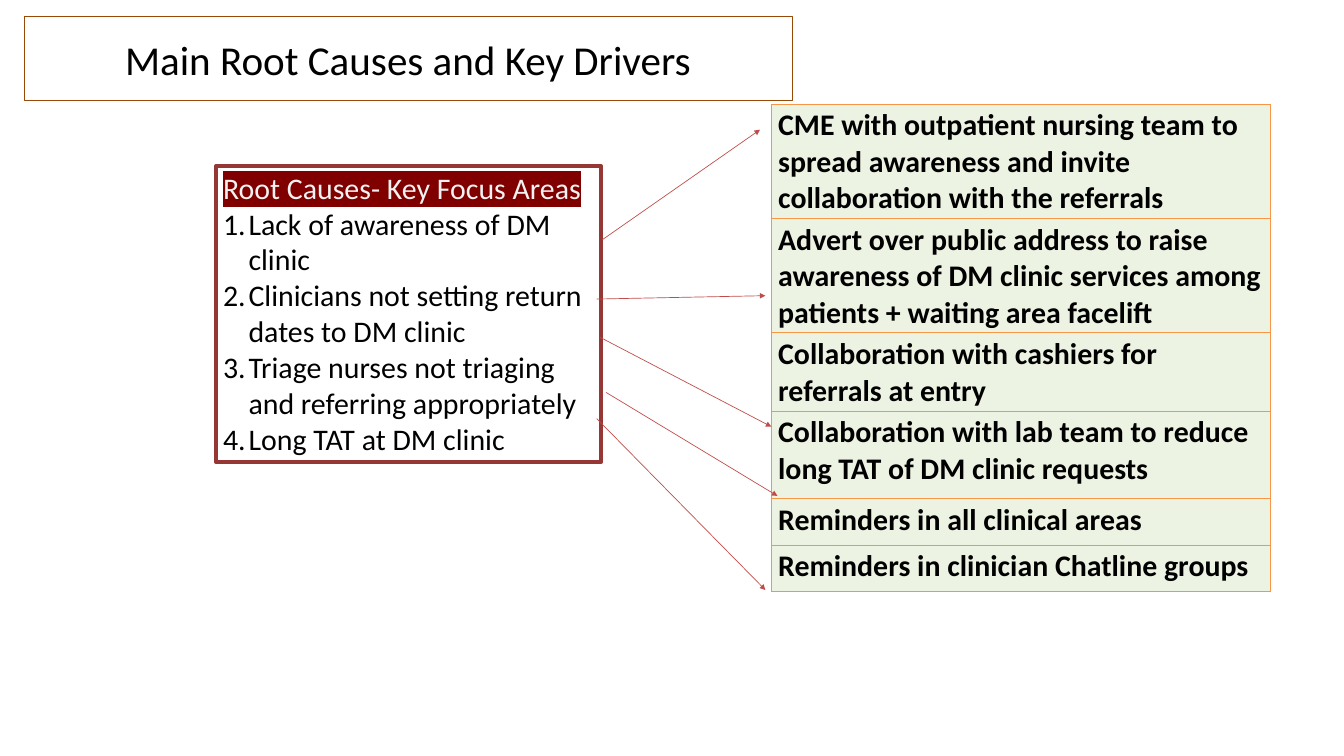
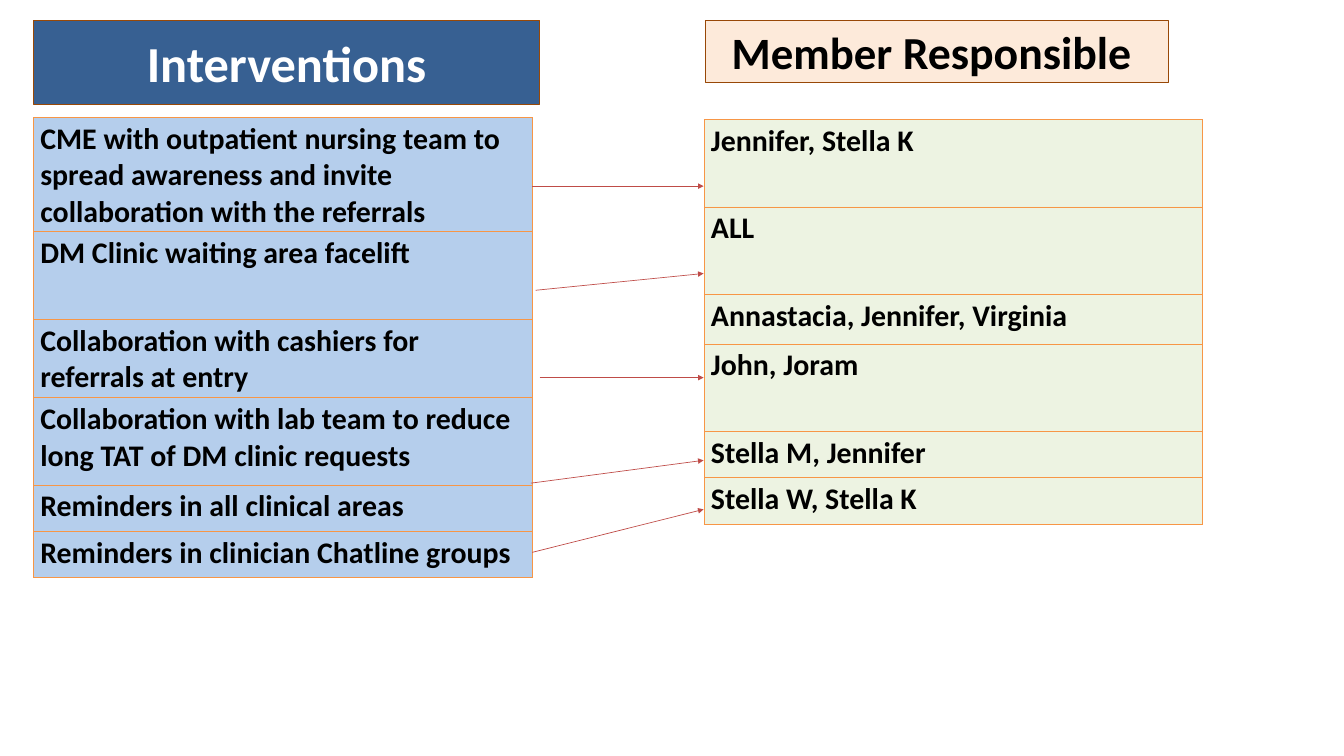
from lxml.etree import SubElement
from pptx import Presentation
from pptx.dml.color import RGBColor
from pptx.enum.shapes import MSO_CONNECTOR, MSO_SHAPE
from pptx.enum.text import MSO_ANCHOR, MSO_AUTO_SIZE, PP_ALIGN
from pptx.oxml.ns import qn
from pptx.util import Inches, Pt

BLACK = RGBColor(0x00, 0x00, 0x00)
WHITE = RGBColor(0xFF, 0xFF, 0xFF)
OFF_WHITE = RGBColor(0xF2, 0xF2, 0xF2)
BROWN = RGBColor(0x98, 0x48, 0x07)
CRIMSON = RGBColor(0x95, 0x37, 0x35)
MAROON = RGBColor(0x80, 0x00, 0x00)
ARROW_RED = RGBColor(0xBF, 0x4C, 0x48)
ORANGE = RGBColor(0xF7, 0x96, 0x46)
PEACH = RGBColor(0xFD, 0xEA, 0xDA)
NAVY = RGBColor(0x37, 0x60, 0x92)
BLUE = RGBColor(0x55, 0x8E, 0xD5)
GREEN = RGBColor(0xD7, 0xE4, 0xBD)

BODY_SIZE = 32
CELL_OPACITY = 43
COLUMN_WIDTH = 7.42
ROW_HEIGHTS = [1.3, 1.3, 0.74, 1.3, 0.69, 0.69]

ROOT_CAUSES = [
    "Lack of awareness of DM clinic",
    "Clinicians not setting return dates to DM clinic",
    "Triage nurses not triaging and referring appropriately",
    "Long TAT at DM clinic",
]
OUTREACH = "CME with outpatient nursing team to spread awareness and invite collaboration with the referrals"
ADVERT = ("Advert over public address to raise awareness of DM clinic services "
          "among patients + waiting area facelift")
FACELIFT = "DM Clinic waiting area facelift"
SHARED_INTERVENTIONS = [
    "Collaboration with cashiers for referrals at entry",
    "Collaboration with lab team to reduce long TAT of DM clinic requests",
    "Reminders in all clinical areas",
    "Reminders in clinician Chatline groups",
]
MEMBERS = [
    "Jennifer, Stella K",
    "ALL",
    "Annastacia, Jennifer, Virginia",
    "John, Joram",
    "Stella M, Jennifer",
    "Stella W, Stella K",
]
CAUSE_ARROWS = [
    ((8.96, 3.57), (11.31, 1.93)),
    ((8.88, 4.45), (11.39, 4.4)),
    ((8.93, 5.02), (11.48, 6.35)),
    ((9.02, 5.84), (11.57, 7.38)),
    ((8.88, 6.23), (11.39, 8.78)),
]
MEMBER_ARROWS = [
    ((7.92, 2.77), (10.47, 2.77)),
    ((7.97, 4.32), (10.47, 4.07)),
    ((8.03, 5.62), (10.47, 5.62)),
    ((7.9, 7.19), (10.47, 6.85)),
    ((7.92, 8.22), (10.47, 7.58)),
]


class Deck:
    def __init__(self):
        self.presentation = Presentation()
        self.presentation.slide_width = Inches(20)
        self.presentation.slide_height = Inches(11.25)
        self.slide = None

    def styled_run(self, paragraph, text, size=BODY_SIZE, color=BLACK, bold=False):
        run = paragraph.add_run()
        run.text = text
        style = {"name": "Calibri", "size": Pt(size), "bold": bold}
        for attribute, value in style.items():
            setattr(run.font, attribute, value)
        run.font.color.rgb = color
        return run

    def outline(self, box, fill, color, width):
        if fill is None:
            box.fill.background()
        else:
            box.fill.solid()
            box.fill.fore_color.rgb = fill
        box.line.color.rgb = color
        box.line.width = Pt(width)

    def titled_slide(self, text, place, fill=None, **style):
        layout = self.presentation.slide_layouts[5]
        self.slide = self.presentation.slides.add_slide(layout)
        title = self.slide.shapes.title
        for side, length in zip(("left", "top", "width", "height"), place):
            setattr(title, side, Inches(length))
        self.outline(title, fill, BROWN, 0.75)
        title.text_frame.vertical_anchor = MSO_ANCHOR.MIDDLE
        heading = title.text_frame.paragraphs[0]
        heading.alignment = PP_ALIGN.CENTER
        self.styled_run(heading, text, **style)

    def box(self, place, fill, color, width, align):
        """Add a top-anchored rectangle and return its text frame."""
        panel = self.slide.shapes.add_shape(MSO_SHAPE.RECTANGLE, *map(Inches, place))
        panel.shadow.inherit = False
        self.outline(panel, fill, color, width)
        frame = panel.text_frame
        frame_format = {
            "word_wrap": True,
            "vertical_anchor": MSO_ANCHOR.TOP,
            "auto_size": MSO_AUTO_SIZE.SHAPE_TO_FIT_TEXT,
        }
        for attribute, value in frame_format.items():
            setattr(frame, attribute, value)
        frame.paragraphs[0].alignment = align
        return frame

    def highlight(self, run, color):
        text_fill = run.font._element.find(qn("a:solidFill"))
        marker = SubElement(run.font._element, qn("a:highlight"))
        SubElement(marker, qn("a:srgbClr"), val=str(color))
        text_fill.addnext(marker)

    def numbered(self, frame, items):
        for item in items:
            paragraph = frame.add_paragraph()
            paragraph.alignment = PP_ALIGN.LEFT
            properties = paragraph._p.get_or_add_pPr()
            properties.set("marL", str(Inches(0.38)))
            properties.set("indent", str(Inches(-0.38)))
            SubElement(properties, qn("a:buAutoNum"), type="arabicPeriod")
            self.styled_run(paragraph, item)

    def column(self, left, top, entries, fill):
        """Add a one-column table with a translucent fill."""
        table = self.slide.shapes.add_table(
            len(entries), 1, Inches(left), Inches(top),
            Inches(COLUMN_WIDTH), Inches(sum(ROW_HEIGHTS))).table
        table.first_row = table.horz_banding = False
        for row, height, entry in zip(table.rows, ROW_HEIGHTS, entries):
            row.height = Inches(height)
            cell = row.cells[0]
            properties = cell._tc.get_or_add_tcPr()
            for side in ("lnL", "lnR", "lnT", "lnB"):
                border = SubElement(properties, qn(f"a:{side}"), w=str(Pt(1)))
                border_fill = SubElement(border, qn("a:solidFill"))
                SubElement(border_fill, qn("a:srgbClr"), val=str(ORANGE))
            cell.fill.solid()
            cell.fill.fore_color.rgb = fill
            shade = properties.find(qn("a:solidFill")).find(qn("a:srgbClr"))
            SubElement(shade, qn("a:alpha"), val=str(CELL_OPACITY * 1000))
            self.styled_run(cell.text_frame.paragraphs[0], entry, bold=True)

    def arrows(self, routes):
        for start, end in routes:
            arrow = self.slide.shapes.add_connector(
                MSO_CONNECTOR.STRAIGHT, *map(Inches, start + end))
            arrow.line.color.rgb = ARROW_RED
            arrow.line.width = Pt(0.75)
            properties = arrow._element.spPr
            SubElement(properties.find(qn("a:ln")), qn("a:tailEnd"), type="triangle")
            SubElement(properties, qn("a:effectLst"))


def build_root_causes(deck):
    deck.titled_slide("Main Root Causes and Key Drivers", (0.36, 0.25, 11.43, 1.25), size=44)
    causes = deck.box((3.22, 2.47, 5.72, 4.41), None, CRIMSON, 4.5, PP_ALIGN.LEFT)
    heading = deck.styled_run(causes.paragraphs[0], "Root Causes- Key Focus Areas", color=OFF_WHITE)
    deck.highlight(heading, MAROON)
    deck.numbered(causes, ROOT_CAUSES)
    deck.column(11.48, 1.55, [OUTREACH, ADVERT, *SHARED_INTERVENTIONS], GREEN)
    deck.arrows(CAUSE_ARROWS)


def build_interventions(deck):
    deck.titled_slide("Interventions", (0.5, 0.3, 7.53, 1.25), NAVY,
                      size=54, color=WHITE, bold=True)
    responsible = deck.box((10.5, 0.3, 6.88, 0.93), PEACH, BROWN, 0.75, PP_ALIGN.CENTER)
    for text, size in (("Member", 48), (" Responsible ", 49.1)):
        deck.styled_run(responsible.paragraphs[0], text, size, bold=True)
    deck.column(0.5, 1.75, [OUTREACH, FACELIFT, *SHARED_INTERVENTIONS], BLUE)
    deck.column(10.48, 1.78, MEMBERS, GREEN)
    deck.arrows(MEMBER_ARROWS)


def main():
    deck = Deck()
    build_root_causes(deck)
    build_interventions(deck)
    deck.presentation.save("out.pptx")


if __name__ == "__main__":
    main()
